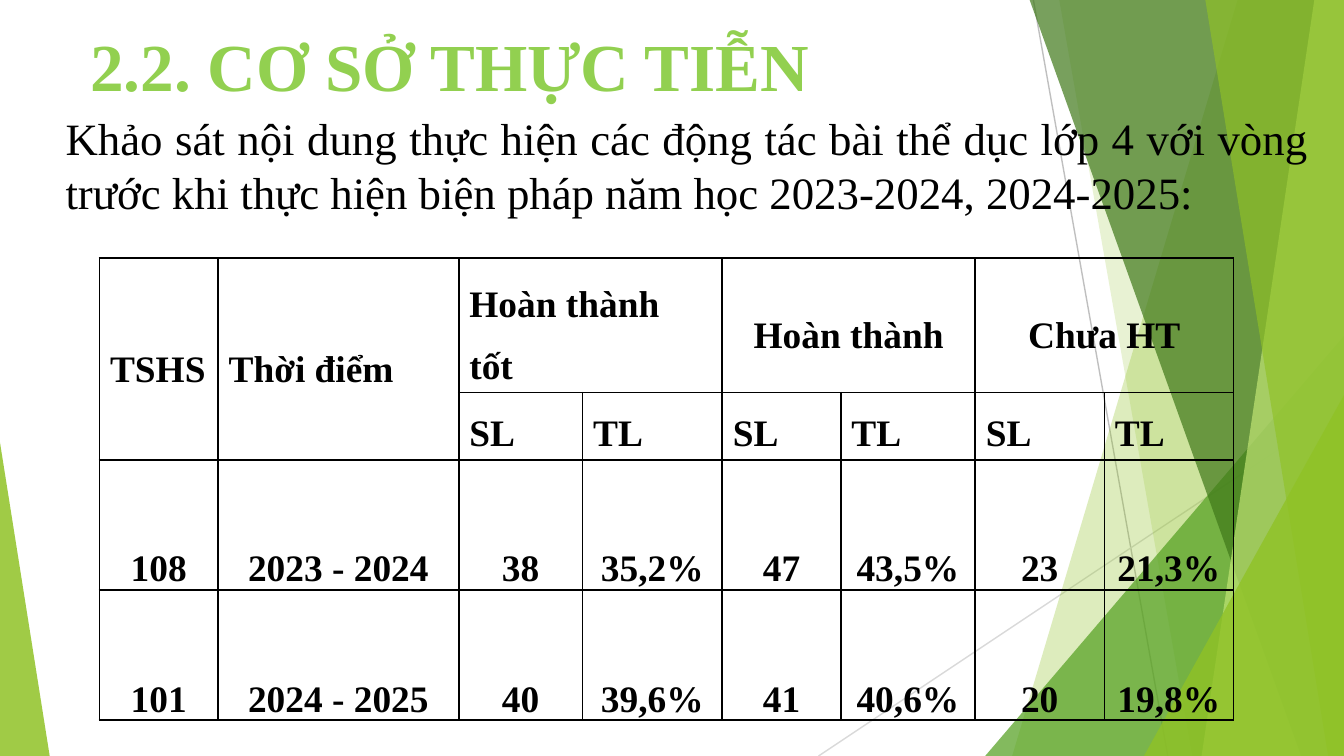
from dataclasses import dataclass

from lxml.etree import SubElement
from pptx import Presentation
from pptx.dml.color import RGBColor
from pptx.enum.shapes import MSO_CONNECTOR, MSO_SHAPE
from pptx.enum.text import MSO_ANCHOR, MSO_AUTO_SIZE, PP_ALIGN
from pptx.oxml.ns import qn
from pptx.util import Cm, Pt


@dataclass(frozen=True)
class Theme:
    font: str = "Times New Roman"
    title_size: int = 36
    intro_size: int = 24
    table_size: int = 20
    title: str = "92D050"
    ink: str = "000000"
    leaf: str = "90C226"
    grass: str = "54A021"
    forest: str = "3F7819"
    lime: str = "C0E474"
    rule_dark: str = "BFBFBF"
    rule_light: str = "D9D9D9"


@dataclass(frozen=True)
class Box:
    left: float
    top: float
    width: float
    height: float

    @property
    def right(self):
        return self.left + self.width

    @property
    def bottom(self):
        return self.top + self.height

    def lengths(self):
        return Cm(self.left), Cm(self.top), Cm(self.width), Cm(self.height)


THEME = Theme()
SLIDE = Box(0, 0, 25.4, 14.29)


def style(paragraph, size, color, bold=False, align=PP_ALIGN.LEFT):
    paragraph.alignment = align
    font = paragraph.font
    font.name, font.size, font.bold = THEME.font, Pt(size), bold
    font.color.rgb = RGBColor.from_string(color)


def tint(shape, color, opacity):
    shape.shadow.inherit = False
    shape.line.fill.background()
    shape.fill.solid()
    shape.fill.fore_color.rgb = RGBColor.from_string(color)
    solid = shape.element.spPr.find(qn("a:solidFill"))
    SubElement(solid[0], qn("a:alpha"), val=str(opacity * 1000))


def add_rule(slide, start, end, color):
    rule = slide.shapes.add_connector(
        MSO_CONNECTOR.STRAIGHT, *(Cm(length) for length in start + end))
    rule.line.color.rgb = RGBColor.from_string(color)
    rule.line.width = Pt(0.75)
    SubElement(rule.element.spPr, qn("a:effectLst"))


def add_facet(slide, box, top_x, bottom_x, color, opacity):
    corners = [(box.left + top_x, box.top), (box.right, box.top),
               (box.right, box.bottom), (box.left + bottom_x, box.bottom)]
    start, *others = [(Cm(x), Cm(y)) for x, y in corners]
    outline = slide.shapes.build_freeform(*start)
    outline.add_line_segments(others, close=True)
    tint(outline.convert_to_shape(), color, opacity)


def add_wedge(slide, box, peak, color, opacity):
    wedge = slide.shapes.add_shape(MSO_SHAPE.ISOSCELES_TRIANGLE, *box.lengths())
    wedge.adjustments[0] = peak
    tint(wedge, color, opacity)


def add_corner(slide, box, x, y, color, opacity):
    corner = Box(box.left + x, box.top + y, box.width - x, box.height - y)
    add_wedge(slide, corner, 1, color, opacity)


def add_facets(slide, box):
    add_rule(slide, (box.left + 4.06, box.top), (box.left + 6.6, box.bottom),
             THEME.rule_dark)
    add_rule(slide, (box.right, box.top + 7.67), (box.left, box.bottom),
             THEME.rule_light)
    for place, *where_and_fill in (
        (add_facet, 7.92, 3.66, THEME.leaf, 30),
        (add_facet, 4.55, 7.06, THEME.leaf, 20),
        (add_corner, 3.15, 6.35, THEME.grass, 72),
        (add_facet, 3.99, 9.12, THEME.forest, 70),
        (add_facet, 9.37, 7.24, THEME.lime, 70),
        (add_facet, 7.31, 9.63, THEME.leaf, 65),
        (add_corner, 6.15, 7.47, THEME.leaf, 80),
    ):
        place(slide, box, *where_and_fill)


def add_title(slide, box):
    title = slide.shapes.title
    slide.shapes.element.append(title.element)
    title.left, title.top, title.width, title.height = box.lengths()
    frame = title.text_frame
    frame.text = "2.2. CƠ SỞ THỰC TIỄN"
    frame.word_wrap = True
    frame.vertical_anchor = MSO_ANCHOR.TOP
    frame.auto_size = MSO_AUTO_SIZE.SHAPE_TO_FIT_TEXT
    style(frame.paragraphs[0], THEME.title_size, THEME.title, bold=True)


def add_intro(slide, box):
    frame = slide.shapes.add_textbox(*box.lengths()).text_frame
    frame.word_wrap = True
    frame.vertical_anchor = MSO_ANCHOR.MIDDLE
    frame.auto_size = MSO_AUTO_SIZE.SHAPE_TO_FIT_TEXT
    frame.text = ("Khảo sát nội dung thực hiện các động tác bài thể dục lớp 4 "
                  "với vòng trước khi thực hiện biện pháp năm học 2023-2024, "
                  "2024-2025:")
    style(frame.paragraphs[0], THEME.intro_size, THEME.ink,
          align=PP_ALIGN.JUSTIFY)


def format_cell(cell):
    cell.margin_left = cell.margin_right = Cm(0.2)
    cell.margin_top = cell.margin_bottom = 0
    properties = cell._tc.get_or_add_tcPr()
    for side in ("a:lnL", "a:lnR", "a:lnT", "a:lnB"):
        border = SubElement(properties, qn(side), w=str(Pt(1)))
        fill = SubElement(border, qn("a:solidFill"))
        SubElement(fill, qn("a:srgbClr"), val=THEME.ink)
    cell.fill.background()


def write_cell(cell, text, anchor, align):
    cell.text = text
    cell.vertical_anchor = anchor
    paragraph = cell.text_frame.paragraphs[0]
    paragraph.line_spacing = 1.5
    style(paragraph, THEME.table_size, THEME.ink, bold=True, align=align)


def add_results(slide, box):
    widths = (2.24, 4.55, 2.34, 2.64, 2.24, 2.54, 2.44, 2.44)
    heights = (2.53, 1.27, 2.46, 2.46)
    results = slide.shapes.add_table(
        len(heights), len(widths), *box.lengths()).table
    results.first_row = results.horz_banding = False
    for column, width in zip(results.columns, widths):
        column.width = Cm(width)
    for row, height in zip(results.rows, heights):
        row.height = Cm(height)
    for cell in results.iter_cells():
        format_cell(cell)

    headings = (
        (0, "TSHS", (1, 0), PP_ALIGN.LEFT),
        (1, "Thời điểm", (1, 1), PP_ALIGN.LEFT),
        (2, "Hoàn thành tốt", (0, 3), PP_ALIGN.LEFT),
        (4, "Hoàn thành", (0, 5), PP_ALIGN.CENTER),
        (6, "Chưa HT", (0, 7), PP_ALIGN.CENTER),
    )
    for column, heading, last, align in headings:
        cell = results.cell(0, column)
        cell.merge(results.cell(*last))
        write_cell(cell, heading, MSO_ANCHOR.MIDDLE, align)
    for column, measure in enumerate(("SL", "TL") * 3, start=2):
        write_cell(results.cell(1, column), measure, MSO_ANCHOR.TOP,
                   PP_ALIGN.LEFT)
    years = (
        ("108", "2023 - 2024", "38", "35,2%", "47", "43,5%", "23", "21,3%"),
        ("101", "2024 - 2025", "40", "39,6%", "41", "40,6%", "20", "19,8%"),
    )
    for row, year in enumerate(years, start=2):
        for column, value in enumerate(year):
            write_cell(results.cell(row, column), value, MSO_ANCHOR.BOTTOM,
                       PP_ALIGN.CENTER)


def main():
    deck = Presentation()
    deck.slide_width, deck.slide_height = Cm(SLIDE.width), Cm(SLIDE.height)
    slide = deck.slides.add_slide(deck.slide_layouts.get_by_name("Title Only"))
    add_facets(slide, Box(15.47, 0, 9.93, SLIDE.height))
    add_wedge(slide, Box(0, 8.36, 0.94, 5.93), 0, THEME.leaf, 85)
    add_title(slide, Box(1.45, 0.33, 19.58, 1.8))
    add_intro(slide, Box(0.99, 1.96, 23.98, 2.31))
    add_results(slide, Box(1.88, 4.88, 21.43, 8.72))
    deck.save("out.pptx")


if __name__ == "__main__":
    main()
